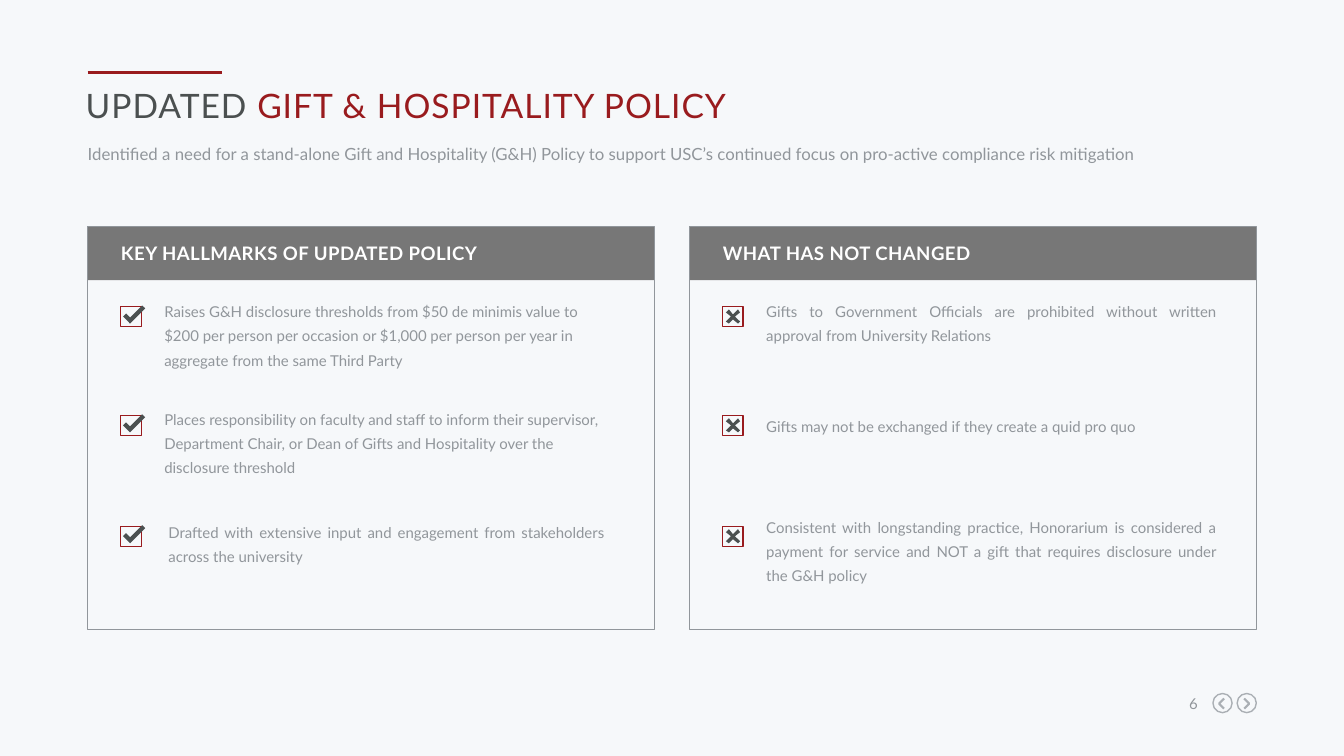
from dataclasses import dataclass

from lxml import etree
from pptx import Presentation
from pptx.dml.color import RGBColor
from pptx.enum import shapes, text
from pptx.oxml import ns
from pptx.util import Inches, Pt


@dataclass(frozen=True)
class Theme:
    font: str = "Lato"
    background: str = "F6F8FA"
    red: str = "991B1E"
    dark: str = "4B5050"
    grey: str = "91969B"
    header: str = "777777"
    arrow: str = "AAAFB4"
    white: str = "FFFFFF"
    title: float = 24
    heading: float = 13.3
    subtitle: float = 12
    body: float = 10.7
    leading: float = 17.3


THEME = Theme()
RECT = shapes.MSO_SHAPE.RECTANGLE
LEFT, RIGHT = text.PP_ALIGN.LEFT, text.PP_ALIGN.RIGHT
JUSTIFY = text.PP_ALIGN.JUSTIFY

# Icon outlines, relative to the top left of the checkbox
TICK = [(0.05, 0.07), (0.09, 0.11), (0.21, -0.01), (0.24, 0.02),
        (0.09, 0.17), (0.06, 0.14), (0.02, 0.1)]
CROSS = [(0.03, 0.15), (0.08, 0.1), (0.03, 0.06), (0.06, 0.03),
         (0.1, 0.08), (0.15, 0.03), (0.17, 0.06), (0.12, 0.1),
         (0.17, 0.15), (0.15, 0.17), (0.1, 0.13), (0.06, 0.17)]

CARD_TOP, CARD_WIDTH, CARD_HEIGHT = 2.25, 5.62, 4
ICON_TOPS = (0.79, 1.87, 2.97)

# Each point: wording, top in the card, indent after the icon, width, alignment
HALLMARKS = [
    ("Raises G&H disclosure thresholds from $50 de minimis value to $200 per "
     "person per occasion or $1,000 per person per year in aggregate from the "
     "same Third Party", 0.69, 0.43, 4.47, LEFT),
    ("Places responsibility on faculty and staff to inform their supervisor, "
     "Department Chair, or Dean of Gifts and Hospitality over the disclosure "
     "threshold", 1.76, 0.43, 4.47, LEFT),
    ("Drafted with extensive input and engagement from stakeholders across "
     "the university", 2.88, 0.47, 4.33, JUSTIFY),
]
UNCHANGED = [
    ("Gifts to Government Officials are prohibited without written approval "
     "from University Relations", 0.69, 0.43, 4.47, JUSTIFY),
    ("Gifts may not be exchanged if they create a quid pro quo",
     1.83, 0.43, 4.47, JUSTIFY),
    ("Consistent with longstanding practice, Honorarium is considered a "
     "payment for service and NOT a gift that requires disclosure under the "
     "G&H policy", 2.83, 0.43, 4.47, JUSTIFY),
]


def rgb(value):
    return RGBColor.from_string(value)


def paint(shape, fill=None, line=None, weight=0.75):
    shape.shadow.inherit = False
    if fill:
        shape.fill.solid()
        shape.fill.fore_color.rgb = rgb(fill)
    else:
        shape.fill.background()
    if line:
        shape.line.color.rgb = rgb(line)
        shape.line.width = Pt(weight)
    else:
        shape.line.fill.background()


def write(frame, runs, size, align=LEFT, bold=False, leading=None, spacing=0):
    """Fill a text frame with one paragraph of (wording, colour) runs."""
    frame.margin_left = frame.margin_right = 0
    frame.margin_top = frame.margin_bottom = 0
    frame.word_wrap = True
    frame.auto_size = text.MSO_AUTO_SIZE.NONE
    frame.vertical_anchor = text.MSO_ANCHOR.TOP
    paragraph = frame.paragraphs[0]
    paragraph.alignment = align
    if leading:
        paragraph.line_spacing = Pt(leading)
    for wording, colour in runs:
        run = paragraph.add_run()
        run.text = wording
        run.font.name = THEME.font
        run.font.size = Pt(size)
        run.font.bold = bold
        run.font.color.rgb = rgb(colour)
        if spacing:
            run.font._element.set("spc", str(round(spacing * 100)))


def add_text(slide, box, runs, size, **style):
    label = slide.shapes.add_textbox(*map(Inches, box))
    write(label.text_frame, runs, size, **style)


def add_outline(parent, left, top, points, close=True):
    placed = [(Inches(left + x), Inches(top + y)) for x, y in points]
    builder = parent.build_freeform(*placed[0])
    builder.add_line_segments(placed[1:], close=close)
    return builder.convert_to_shape()


def add_heading(slide, left, top, width):
    # Accent rule
    rule = slide.shapes.add_connector(
        shapes.MSO_CONNECTOR.STRAIGHT, Inches(left), Inches(top),
        Inches(left + 1.33), Inches(top))
    rule.line.color.rgb = rgb(THEME.red)
    rule.line.width = Pt(2.25)
    etree.SubElement(rule._element.spPr, ns.qn("a:effectLst"))

    # Title and subtitle
    title = slide.shapes.title
    title.left, title.top = Inches(left - 0.02), Inches(top + 0.12)
    title.width, title.height = Inches(width), Inches(0.56)
    write(title.text_frame,
          [("UPDATED ", THEME.dark), ("GIFT & HOSPITALITY POLICY", THEME.red)],
          THEME.title, spacing=0.7)
    subtitle = ("Identified a need for a stand-alone Gift and Hospitality (G&H) "
                "Policy to support USC’s continued focus on pro-active "
                "compliance risk mitigation")
    add_text(slide, (left, top + 0.68, width, 0.22), [(subtitle, THEME.grey)],
             THEME.subtitle, leading=16)


def add_checkbox(slide, left, top, mark):
    group = slide.shapes.add_group_shape().shapes
    square = group.add_shape(RECT, Inches(left), Inches(top),
                             Inches(0.2), Inches(0.2))
    paint(square, line=THEME.red)
    paint(add_outline(group, left, top, mark), fill=THEME.dark)


def add_card(slide, left, top, width, height, heading, mark, points):
    # Header band and frame
    band = slide.shapes.add_shape(
        RECT, *map(Inches, (left, top, width, 0.53)))
    paint(band, fill=THEME.header)
    frame = slide.shapes.add_shape(
        RECT, *map(Inches, (left, top, width, height)))
    paint(frame, line=THEME.grey)

    inner = left + 0.33
    add_text(slide, (inner, top + 0.13, 4.89, 0.24), [(heading, THEME.white)],
             THEME.heading, bold=True, leading=THEME.leading, spacing=0.3)

    # Checked points
    for icon_top, point in zip(ICON_TOPS, points):
        wording, text_top, indent, text_width, align = point
        add_checkbox(slide, inner, top + icon_top, mark)
        add_text(slide, (inner + indent, top + text_top, text_width, 0.72),
                 [(wording, THEME.grey)], THEME.body, align=align,
                 leading=THEME.leading)


def add_footer(slide, left, top):
    add_text(slide, (left, top + 0.02, 0.3, 0.18), [("6", THEME.grey)],
             THEME.body, align=RIGHT, spacing=0.4)
    # Previous and next arrows
    for offset, way in ((0.44, -1), (0.68, 1)):
        ring = slide.shapes.add_shape(
            shapes.MSO_SHAPE.OVAL,
            *map(Inches, (left + offset + 0.01, top + 0.01, 0.19, 0.19)))
        paint(ring, line=THEME.arrow, weight=1)
        chevron = add_outline(
            slide.shapes, left + offset + 0.1, top + 0.11,
            [(-0.02 * way, -0.05), (0.03 * way, 0), (-0.02 * way, 0.05)],
            close=False)
        paint(chevron, line=THEME.arrow, weight=1.5)


def main():
    deck = Presentation()
    deck.slide_width, deck.slide_height = Inches(13.33), Inches(7.5)
    slide = deck.slides.add_slide(deck.slide_layouts.get_by_name("Title Only"))
    slide.background.fill.solid()
    slide.background.fill.fore_color.rgb = rgb(THEME.background)

    add_heading(slide, 0.87, 0.72, 11.6)
    cards = [(0.87, "KEY HALLMARKS OF UPDATED POLICY", TICK, HALLMARKS),
             (6.84, "WHAT HAS NOT CHANGED", CROSS, UNCHANGED)]
    for left, heading, mark, points in cards:
        add_card(slide, left, CARD_TOP, CARD_WIDTH, CARD_HEIGHT,
                 heading, mark, points)
    add_footer(slide, 11.58, 6.87)
    deck.save("out.pptx")


if __name__ == "__main__":
    main()
